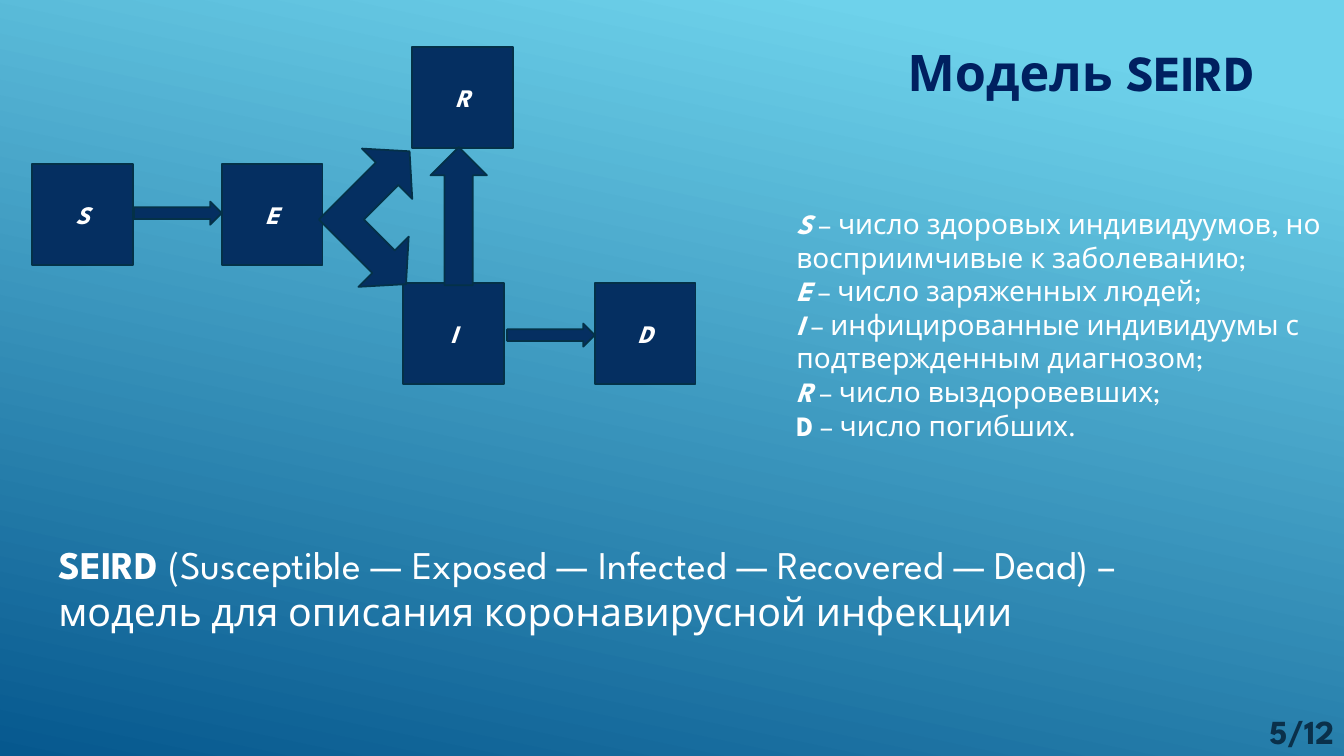
from pptx import Presentation
from pptx import util as u
from pptx.dml.color import RGBColor
from pptx.enum import shapes, text

FONT = "League Spartan"
WHITE, NAVY, INK = "FFFFFF", "002060", "0A304A"
BOX_FILL, BOX_LINE = "052F61", "043148"


def rgb(value):
    return RGBColor.from_string(value)


def place(sp, left, top, width, height):
    sp.left, sp.top = u.Inches(left), u.Inches(top)
    sp.width, sp.height = u.Inches(width), u.Inches(height)


def style(r, size, color, bold=False, italic=False):
    f = r.font
    f.name, f.size, f.bold, f.italic = FONT, u.Pt(size), bold, italic
    f.color.rgb = rgb(color)


def set_background(s):
    fill = s.background.fill
    fill.gradient()
    fill.gradient_angle = 258
    for stop, (position, color) in zip(fill.gradient_stops, [(0.1, "6ED2EB"), (1, "06588E")]):
        stop.position = position
        stop.color.rgb = rgb(color)


def set_title(s, title):
    sp = s.shapes.title
    place(sp, 8.9, 0.36, 3.76, 0.71)
    tf = sp.text_frame
    tf.text = title
    tf.word_wrap = False
    tf.auto_size = text.MSO_AUTO_SIZE.SHAPE_TO_FIT_TEXT
    tf.vertical_anchor = text.MSO_ANCHOR.TOP
    p = tf.paragraphs[0]
    p.alignment = text.PP_ALIGN.LEFT
    style(p.runs[0], 36, NAVY, bold=True)


def add_text(s, at, paragraphs, size, color=WHITE):
    tf = s.shapes.add_textbox(*map(u.Inches, at)).text_frame
    tf.word_wrap = True
    for i, parts in enumerate(paragraphs):
        p = tf.paragraphs[0] if i == 0 else tf.add_paragraph()
        for content, bold, italic in parts:
            if content == "\n":
                p.add_line_break()
                continue
            r = p.add_run()
            r.text = content
            style(r, size, color, bold, italic)
    return tf


def add_block(s, kind, left, top, width, height):
    sp = s.shapes.add_shape(kind, *map(u.Inches, (left, top, width, height)))
    sp.shadow.inherit = False
    sp.fill.solid()
    sp.fill.fore_color.rgb = rgb(BOX_FILL)
    sp.line.color.rgb = rgb(BOX_LINE)
    sp.line.width = u.Pt(1.25)
    return sp


def add_state(s, letter, left, top):
    sp = add_block(s, shapes.MSO_SHAPE.RECTANGLE, left, top, 1, 1)
    tf = sp.text_frame
    tf.text = letter
    tf.vertical_anchor = text.MSO_ANCHOR.MIDDLE
    p = tf.paragraphs[0]
    p.alignment = text.PP_ALIGN.CENTER
    style(p.runs[0], 18, WHITE, bold=True, italic=True)


def add_diagram(s):
    for letter, left, top in [("D", 5.9, 2.81), ("I", 4, 2.81), ("R", 4.09, 0.47),
                              ("E", 2.2, 1.63), ("S", 0.32, 1.63)]:
        add_state(s, letter, left, top)
    for left, top in [(1.33, 2), (5.03, 3.21)]:
        add_block(s, shapes.MSO_SHAPE.RIGHT_ARROW, left, top, 0.87, 0.23)
    fork = add_block(s, shapes.MSO_SHAPE.LEFT_UP_ARROW, 3.14, 1.53, 1.31, 1.26)
    fork.rotation = 135
    for i, value in enumerate([0.25, 0.28, 0.25]):
        fork.adjustments[i] = value
    add_block(s, shapes.MSO_SHAPE.UP_ARROW, 4.27, 1.46, 0.56, 1.37)


def main():
    prs = Presentation()
    prs.slide_width, prs.slide_height = u.Inches(13.33), u.Inches(7.5)
    s = prs.slides.add_slide(prs.slide_layouts[5])
    set_background(s)
    set_title(s, "Модель SEIRD")

    tf = add_text(s, (12.08, 6.77, 1.25, 0.73), [[("5/12", True, False)]], 24, INK)
    tf.vertical_anchor = text.MSO_ANCHOR.BOTTOM
    tf.paragraphs[0].alignment = text.PP_ALIGN.RIGHT

    add_text(s, (0.48, 5.31, 11.7, 1.04), [[
        ("SEIRD ", True, False),
        ("(Susceptible — Exposed — Infected — Recovered — Dead) – "
         "модель для описания коронавирусной инфекции", False, False),
    ]], 28)

    add_diagram(s)

    add_text(s, (7.8, 2, 5.56, 2.46), [
        [("S", True, True),
         (" – число здоровых индивидуумов, но восприимчивые к заболеванию;", False, False)],
        [("E", True, True), (" – число заряженных людей;", False, False)],
        [("I ", True, True),
         ("– инфицированные индивидуумы с подтвержденным диагнозом;", False, False)],
        [("R", True, True), (" – число выздоровевших;", False, False), ("\n", False, False),
         ("D ", True, False), ("– число погибших.", False, False)],
    ], 20)

    prs.save("out.pptx")


if __name__ == "__main__":
    main()
